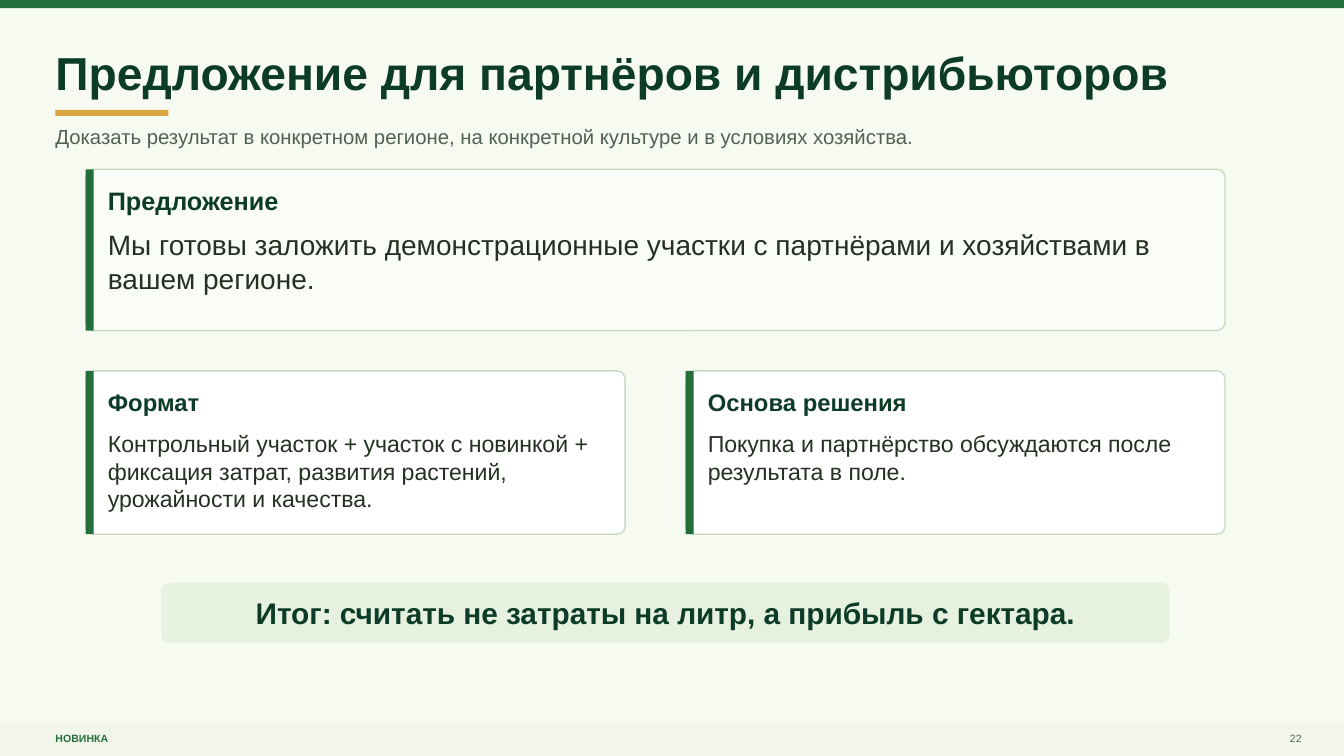
from dataclasses import dataclass

from pptx import Presentation
from pptx.dml.color import RGBColor
from pptx.enum.shapes import MSO_SHAPE
from pptx.enum.text import MSO_ANCHOR, PP_ALIGN
from pptx.slide import Slide
from pptx.util import Inches, Pt

COLS, ROWS = 1333, 750
CELL = Inches(0.01)
FONT = "Arial"
EDGE = 55
LEFT, TOP = 85, 168
SPAN, GAP, STEP = 535, 60, 200
PAD, BAR, ROUND = 22, 8, 8

CREAM = RGBColor(0xF7, 0xFA, 0xF1)
GREEN = RGBColor(0x23, 0x6E, 0x3A)
FOREST = RGBColor(0x0C, 0x3B, 0x27)
MOSS = RGBColor(0x52, 0x62, 0x50)
INK = RGBColor(0x24, 0x30, 0x22)
GOLD = RGBColor(0xD9, 0xA4, 0x41)
BAND = RGBColor(0xF2, 0xF6, 0xEA)
MINT = RGBColor(0xE6, 0xF1, 0xDF)
RIM = RGBColor(0xC8, 0xD9, 0xC2)
PALE = RGBColor(0xFA, 0xFC, 0xF7)
WHITE = RGBColor(0xFF, 0xFF, 0xFF)


@dataclass(frozen=True)
class Box:
    col: float
    row: float
    width: float
    height: float

    def place(self) -> tuple[int, ...]:
        return tuple(round(n * CELL) for n in (self.col, self.row, self.width, self.height))


@dataclass(frozen=True)
class Block:
    box: Box
    fill: RGBColor
    rim: RGBColor | None = None
    curved: bool = False


@dataclass(frozen=True)
class Label:
    box: Box
    text: str
    size: float
    color: RGBColor
    bold: bool = False
    align: PP_ALIGN = PP_ALIGN.LEFT
    anchor: MSO_ANCHOR = MSO_ANCHOR.MIDDLE


@dataclass(frozen=True)
class Card:
    col: int
    row: int
    span: int
    height: int
    fill: RGBColor
    title: str
    head: float
    text: str
    size: float


BLOCKS = [
    Block(Box(0, 0, COLS, 8), GREEN),
    Block(Box(0, 718, COLS, 32), BAND),
    Block(Box(EDGE, 109, 112, 6), GOLD),
    Block(Box(160, 578, 1000, 60), MINT, curved=True),
]

LABELS = [
    Label(Box(EDGE, 725, 120, 15), "НОВИНКА", 7.5, GREEN, True),
    Label(Box(1246, 725, 45, 15), "22", 7.5, MOSS, align=PP_ALIGN.RIGHT),
    Label(Box(EDGE, 42, 1145, 58), "Предложение для партнёров и дистрибьюторов", 33, FOREST, True),
    Label(Box(EDGE, 119, 1120, 33),
          "Доказать результат в конкретном регионе, на конкретной культуре и в условиях хозяйства.",
          14.5, MOSS),
    Label(Box(185, 594, 950, 28), "Итог: считать не затраты на литр, а прибыль с гектара.",
          21.3, FOREST, True, PP_ALIGN.CENTER),
]

CARDS = [
    Card(0, 0, 2, 160, PALE, "Предложение", 18,
         "Мы готовы заложить демонстрационные участки с партнёрами и хозяйствами в вашем регионе.", 20),
    Card(0, 1, 1, 162, WHITE, "Формат", 17,
         "Контрольный участок + участок с новинкой + фиксация затрат, развития растений, "
         "урожайности и качества.", 16.5),
    Card(1, 1, 1, 162, WHITE, "Основа решения", 17,
         "Покупка и партнёрство обсуждаются после результата в поле.", 16.5),
]


def draw_block(slide: Slide, block: Block) -> None:
    kind = MSO_SHAPE.ROUNDED_RECTANGLE if block.curved else MSO_SHAPE.RECTANGLE
    shape = slide.shapes.add_shape(kind, *block.box.place())
    shape.shadow.inherit = False
    shape.fill.solid()
    shape.fill.fore_color.rgb = block.fill
    if block.curved:
        shape.adjustments[0] = ROUND / block.box.height
    if block.rim is None:
        shape.line.fill.background()
    else:
        shape.line.color.rgb = block.rim
        shape.line.width = Pt(1)


def draw_label(slide: Slide, label: Label) -> None:
    frame = slide.shapes.add_textbox(*label.box.place()).text_frame
    frame.word_wrap = True
    frame.vertical_anchor = label.anchor
    frame.margin_left = frame.margin_right = 0
    frame.margin_top = frame.margin_bottom = 0
    para = frame.paragraphs[0]
    para.text = label.text
    para.alignment = label.align
    para.font.name = FONT
    para.font.size = Pt(label.size)
    para.font.bold = label.bold
    para.font.color.rgb = label.color


def draw_card(slide: Slide, card: Card) -> None:
    left = LEFT + card.col * (SPAN + GAP)
    top = TOP + card.row * STEP
    width = card.span * (SPAN + GAP) - GAP
    inner = width - 2 * PAD
    draw_block(slide, Block(Box(left, top, width, card.height), card.fill, RIM, True))
    draw_block(slide, Block(Box(left, top, BAR, card.height), GREEN))
    draw_label(slide, Label(Box(left + PAD, top + 17, inner, 28), card.title, card.head, FOREST, True))
    draw_label(slide, Label(Box(left + PAD, top + 58, inner, card.height - 68),
                            card.text, card.size, INK, anchor=MSO_ANCHOR.TOP))


def main() -> None:
    deck = Presentation()
    deck.slide_width = COLS * CELL
    deck.slide_height = ROWS * CELL
    slide = deck.slides.add_slide(deck.slide_layouts[6])
    slide.background.fill.solid()
    slide.background.fill.fore_color.rgb = CREAM
    for block in BLOCKS:
        draw_block(slide, block)
    for label in LABELS:
        draw_label(slide, label)
    for card in CARDS:
        draw_card(slide, card)
    deck.save("out.pptx")


if __name__ == "__main__":
    main()
